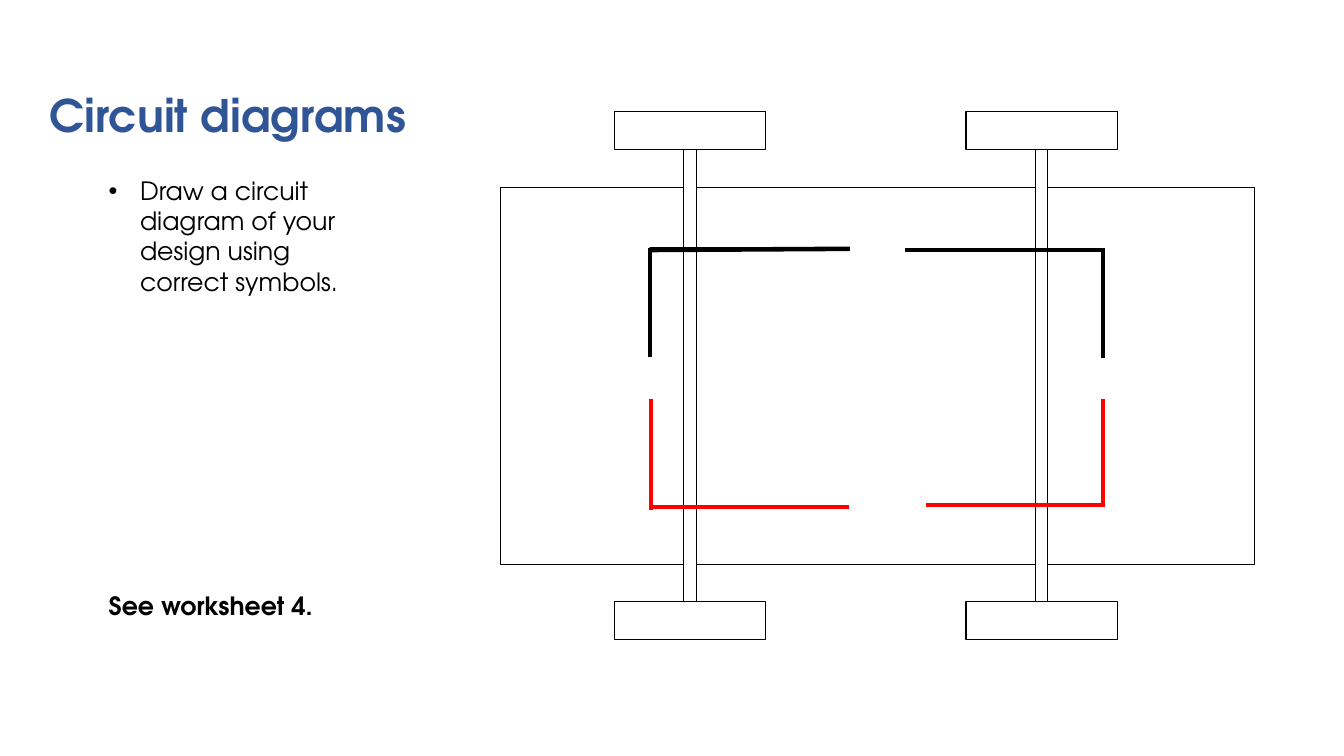
from dataclasses import dataclass

import pptx
import pptx.dml.color
import pptx.enum.shapes
import pptx.enum.text
import pptx.oxml
import pptx.oxml.ns
import pptx.util
from pptx.util import Cm

BLACK = pptx.dml.color.RGBColor(0x00, 0x00, 0x00)
WHITE = pptx.dml.color.RGBColor(0xFF, 0xFF, 0xFF)
RED = pptx.dml.color.RGBColor(0xFF, 0x00, 0x00)
BLUE = pptx.dml.color.RGBColor(0x2F, 0x55, 0x97)
FONT = "TeX Gyre Adventor"

WHEEL_WIDTH, WHEEL_HEIGHT = 3.81, 0.95
AXLE_WIDTH = 0.32
AXLE_CENTRES = (17.39, 26.25)
WHEEL_TOPS = (2.82, 15.16)


@dataclass
class Box:
    left: float
    top: float
    width: float
    height: float


@dataclass
class Wire:
    start: tuple[float, float]
    end: tuple[float, float]
    color: pptx.dml.color.RGBColor
    weight: float = 3


CHASSIS = Box(12.62, 4.72, 19, 9.5)
WIRES = [
    Wire((16.38, 6.25), (16.38, 8.99), BLACK),
    Wire((16.41, 10.06), (16.41, 12.85), RED),
    Wire((21.39, 12.78), (16.36, 12.78), RED),
    Wire((27.79, 6.25), (27.79, 9.02), BLACK),
    Wire((27.79, 12.75), (27.79, 10.06), RED),
    Wire((16.38, 6.27), (21.41, 6.27), BLACK),
    Wire((22.81, 6.3), (27.81, 6.3), BLACK),
    Wire((16.36, 6.3), (21.41, 6.27), BLACK, 3.25),
    Wire((27.84, 12.73), (23.34, 12.73), RED),
]


def place(shape, box: Box) -> None:
    shape.left, shape.top = Cm(box.left), Cm(box.top)
    shape.width, shape.height = Cm(box.width), Cm(box.height)


def draw_rectangle(slide, box: Box) -> None:
    shape = slide.shapes.add_shape(
        pptx.enum.shapes.MSO_SHAPE.RECTANGLE,
        Cm(box.left), Cm(box.top), Cm(box.width), Cm(box.height))
    shape.shadow.inherit = False
    shape.fill.solid()
    shape.fill.fore_color.rgb = WHITE
    shape.line.color.rgb = BLACK
    shape.line.width = pptx.util.Pt(0.75)


def draw_wire(slide, wire: Wire) -> None:
    connector = slide.shapes.add_connector(
        pptx.enum.shapes.MSO_CONNECTOR.STRAIGHT,
        *map(Cm, wire.start), *map(Cm, wire.end))
    connector.line.color.rgb = wire.color
    connector.line.width = pptx.util.Pt(wire.weight)
    pptx.oxml.ns.qn("a:effectLst")
    connector.element.spPr.append(
        pptx.oxml.parse_xml(f'<a:effectLst {pptx.oxml.ns.nsdecls("a")}/>'))


def write_text(shape, text: str, *, size: float, color=BLACK, bold: bool = False,
               bullet: bool = False, space_after: float = 0) -> None:
    frame = shape.text_frame
    frame.word_wrap = True
    frame.auto_size = pptx.enum.text.MSO_AUTO_SIZE.SHAPE_TO_FIT_TEXT
    frame.vertical_anchor = pptx.enum.text.MSO_ANCHOR.TOP
    paragraph = frame.paragraphs[0]
    paragraph.alignment = pptx.enum.text.PP_ALIGN.LEFT
    paragraph.line_spacing = 1.0
    paragraph.space_before = pptx.util.Pt(0)
    paragraph.space_after = pptx.util.Pt(space_after)
    if bullet:
        properties = paragraph._p.get_or_add_pPr()
        properties.set("marL", str(Cm(0.79)))
        properties.set("indent", str(Cm(-0.79)))
        namespace = pptx.oxml.ns.nsdecls("a")
        properties.append(pptx.oxml.parse_xml(f'<a:buFont {namespace} typeface="Arial"/>'))
        properties.append(pptx.oxml.parse_xml(f'<a:buChar {namespace} char="•"/>'))
    run = paragraph.add_run()
    run.text = text
    run.font.name = FONT
    run.font.size = pptx.util.Pt(size)
    run.font.bold = bold
    run.font.color.rgb = color


def add_text_box(slide, box: Box, text: str, **text_format) -> None:
    shape = slide.shapes.add_textbox(0, 0, 0, 0)
    place(shape, box)
    write_text(shape, text, **text_format)


def draw_vehicle(slide) -> None:
    draw_rectangle(slide, CHASSIS)
    for top in WHEEL_TOPS:
        for centre in AXLE_CENTRES:
            draw_rectangle(slide, Box(centre - WHEEL_WIDTH / 2, top, WHEEL_WIDTH, WHEEL_HEIGHT))
    axle_top = WHEEL_TOPS[0] + WHEEL_HEIGHT
    for centre in AXLE_CENTRES:
        draw_rectangle(slide, Box(centre - AXLE_WIDTH / 2, axle_top,
                                  AXLE_WIDTH, WHEEL_TOPS[1] - axle_top))


def main() -> None:
    presentation = pptx.Presentation()
    presentation.slide_width, presentation.slide_height = Cm(33.87), Cm(19.05)
    slide = presentation.slides.add_slide(presentation.slide_layouts[5])
    draw_vehicle(slide)
    title = slide.shapes.title
    place(title, Box(0.99, 2.08, 25.4, 1.63))
    write_text(title, "Circuit diagrams", size=32, color=BLUE, bold=True)
    add_text_box(slide, Box(2.49, 4.29, 7.37, 3.33),
                 "Draw a circuit diagram of your design using correct symbols.",
                 size=18, bullet=True, space_after=8)
    for wire in WIRES:
        draw_wire(slide, wire)
    add_text_box(slide, Box(2.49, 14.76, 6.4, 1.02), "See worksheet 4.",
                 size=18, bold=True, space_after=8)
    presentation.save("out.pptx")


if __name__ == "__main__":
    main()
